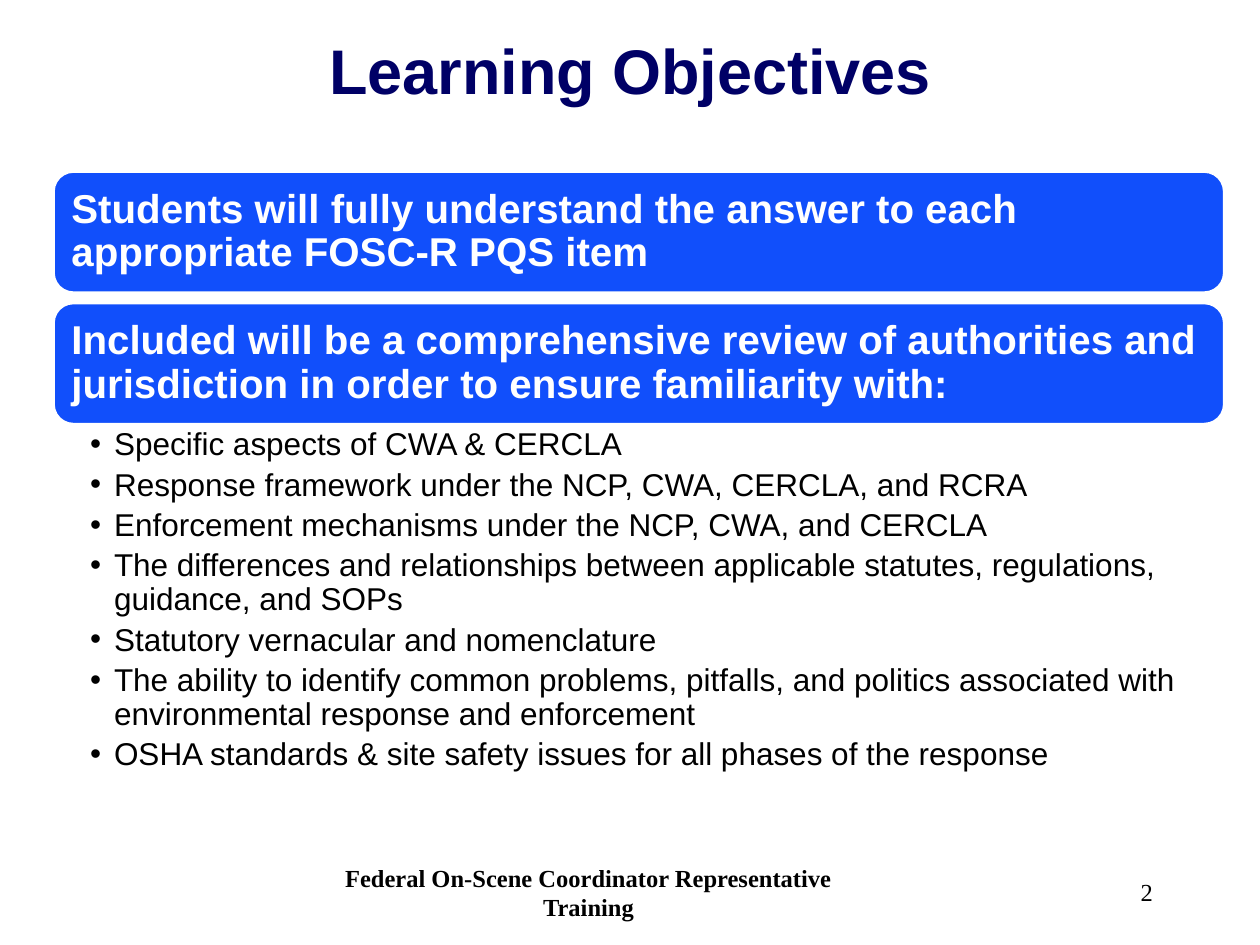
from pptx import Presentation
from pptx.dml.color import RGBColor
from pptx.enum.shapes import MSO_SHAPE
from pptx.enum.text import MSO_ANCHOR, PP_ALIGN
from pptx.oxml.ns import qn
from pptx.util import Cm, Pt
from lxml.etree import SubElement

NAVY = RGBColor(0x00, 0x00, 0x66)
BLUE = RGBColor(0x11, 0x4F, 0xFB)
WHITE = RGBColor(0xFF, 0xFF, 0xFF)
BLACK = RGBColor(0x00, 0x00, 0x00)
SANS = "Arial"
SERIF = "Times New Roman"

BARS = [
    "Students will fully understand the answer to each appropriate FOSC-R PQS item",
    "Included will be a comprehensive review of authorities and jurisdiction "
    "in order to ensure familiarity with:",
]
GOALS = [
    "Specific aspects of CWA & CERCLA",
    "Response framework under the NCP, CWA, CERCLA, and RCRA",
    "Enforcement mechanisms under the NCP, CWA, and CERCLA",
    "The differences and relationships between applicable statutes, "
    "regulations, guidance, and SOPs",
    "Statutory vernacular and nomenclature",
    "The ability to identify common problems, pitfalls, and politics "
    "associated with environmental response and enforcement",
    "OSHA standards & site safety issues for all phases of the response",
]


def write(frame, lines, size=18, font=SANS, color=BLACK, bold=False,
          align=PP_ALIGN.LEFT, anchor=MSO_ANCHOR.MIDDLE, pad=(0.25, 0.13),
          pitch=1.0, after=0, bullet=None):
    frame.word_wrap = True
    frame.vertical_anchor = anchor
    side, edge = pad[:2]
    frame.margin_left = Cm(side)
    frame.margin_right = Cm(pad[2] if len(pad) > 2 else side)
    frame.margin_top = frame.margin_bottom = Cm(edge)
    for i, line in enumerate(lines):
        para = frame.paragraphs[0] if i == 0 else frame.add_paragraph()
        para.alignment = align
        para.line_spacing = pitch
        para.space_after = Pt(after)
        if bullet:
            props = para._p.get_or_add_pPr()
            props.set("marL", str(Cm(0.48)))
            props.set("indent", str(-Cm(0.48)))
            SubElement(props, qn("a:buFont"), typeface=SANS)
            SubElement(props, qn("a:buChar"), char=bullet)
        run = para.add_run()
        run.text = line
        run.font.size = Pt(size)
        run.font.name = font
        run.font.bold = bold
        run.font.color.rgb = color


class Deck:
    fill = BLUE
    edge = WHITE

    def __init__(self, slide):
        self.slide = slide

    def text(self, box, lines, **style):
        shape = self.slide.shapes.add_textbox(*map(Cm, box))
        write(shape.text_frame, lines, **style)

    def bar(self, box, line):
        shape = self.slide.shapes.add_shape(
            MSO_SHAPE.ROUNDED_RECTANGLE, *map(Cm, box))
        shape.shadow.inherit = False
        shape.fill.solid()
        shape.fill.fore_color.rgb = self.fill
        shape.line.color.rgb = self.edge
        shape.line.width = Pt(2)
        write(shape.text_frame, [line], size=23, color=WHITE, bold=True,
              pad=(0.25, 0.25), pitch=0.9)


def main():
    show = Presentation()
    show.slide_width, show.slide_height = Cm(25.4), Cm(19.05)
    deck = Deck(show.slides.add_slide(show.slide_layouts[6]))

    deck.text((0.69, 0.38, 24.03, 2.03), ["Learning Objectives"],
              size=36, color=NAVY, bold=True, align=PP_ALIGN.CENTER)
    for i, line in enumerate(BARS):
        deck.bar((1.07, 3.45 + i * 2.65, 23.62, 2.46), line)
    deck.text((1.07, 8.56, 23.62, 7.8), GOALS, anchor=MSO_ANCHOR.TOP,
              pad=(0.75, 0.08, 0.46), pitch=0.9, after=3.6, bullet="•")
    deck.text((18.21, 17.35, 5.28, 1.27), ["2"], size=14, font=SERIF,
              align=PP_ALIGN.RIGHT)
    deck.text((6.15, 17.35, 11.43, 1.27),
              ["Federal On-Scene Coordinator Representative Training"],
              size=14, font=SERIF, bold=True, align=PP_ALIGN.CENTER,
              pad=(0, 0.13))
    show.save("out.pptx")


if __name__ == "__main__":
    main()
